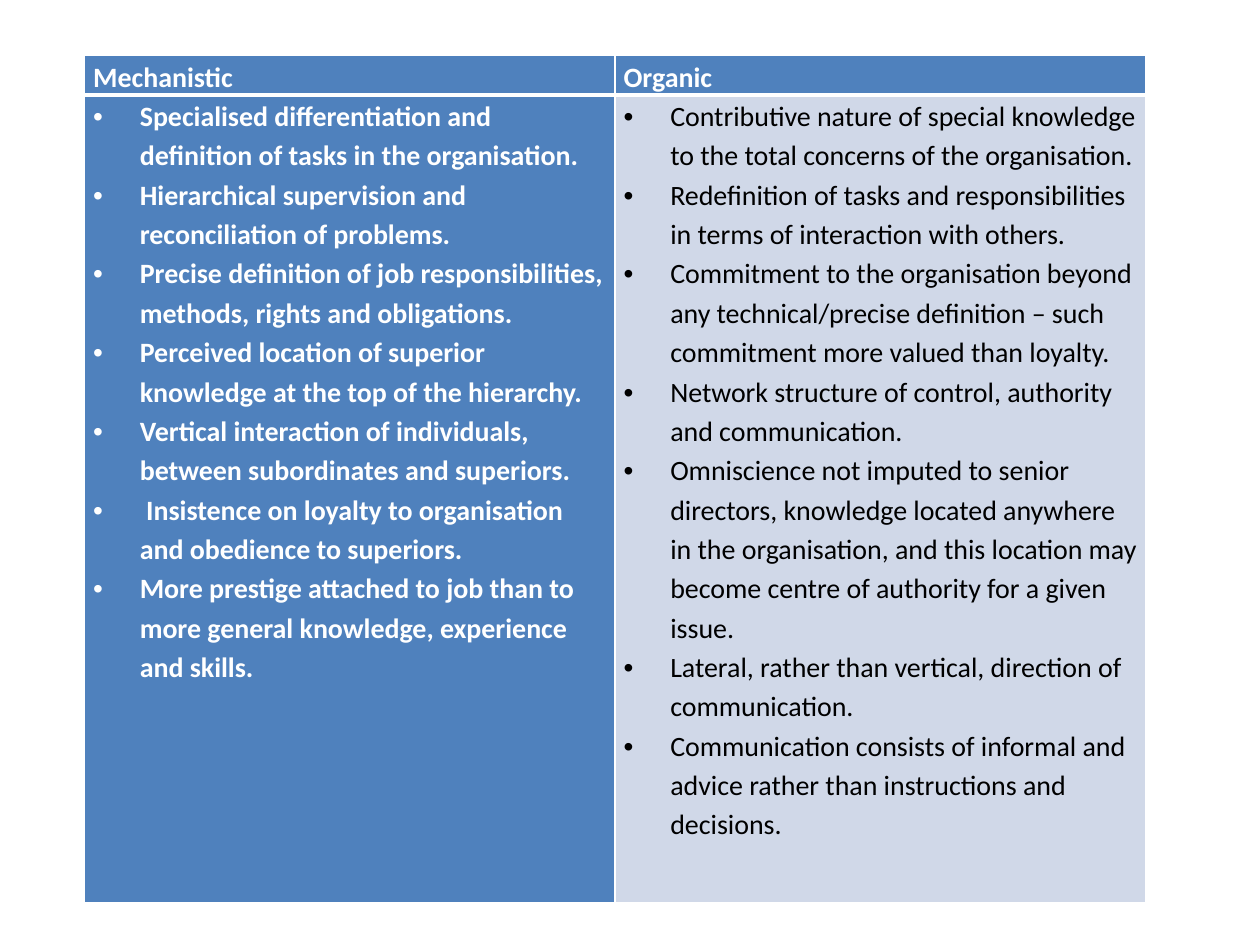
"""Build a slide comparing mechanistic and organic organisations in a table."""
from lxml.etree import SubElement
from pptx import Presentation
from pptx.dml.color import RGBColor
from pptx.oxml.ns import qn
from pptx.util import Inches, Pt

BLUE, PALE, WHITE, BLACK = "4F81BD", "D0D8E8", "FFFFFF", "000000"
HEADER_HEIGHT, BODY_HEIGHT = Inches(0.29), Inches(6.41)
COLUMN_WIDTH = Inches(4.21)
BULLET_INDENT = Inches(0.37)

MECHANISTIC = [
    "Specialised differentiation and definition of tasks in the organisation.",
    "Hierarchical supervision and reconciliation of problems.",
    "Precise definition of job responsibilities, methods, rights and obligations.",
    "Perceived location of superior knowledge at the top of the hierarchy.",
    "Vertical interaction of individuals, between subordinates and superiors.",
    " Insistence on loyalty to organisation and obedience to superiors.",
    "More prestige attached to job than to more general knowledge, experience and skills.",
]
ORGANIC = [
    "Contributive nature of special knowledge to the total concerns of the organisation.",
    "Redefinition of tasks and responsibilities in terms of interaction with others.",
    "Commitment to the organisation beyond any technical/precise definition – such "
    "commitment more valued than loyalty.",
    "Network structure of control, authority and communication.",
    "Omniscience not imputed to senior directors, knowledge located anywhere in the "
    "organisation, and this location may become centre of authority for a given issue.",
    "Lateral, rather than vertical, direction of communication.",
    "Communication consists of informal and advice rather than instructions and decisions.",
]


def color(value):
    """Turn a hex string into a colour."""
    return RGBColor.from_string(value)


def add_text(paragraph, text, ink=WHITE, bold=True, bullet=False):
    """Write one paragraph in the given format."""
    paragraph.line_spacing = 1.15
    span = paragraph.add_run()
    span.text = text
    span.font.name = "Calibri"
    span.font.size = Pt(16)
    span.font.bold = bold
    span.font.color.rgb = color(ink)
    if bullet:
        properties = paragraph._p.get_or_add_pPr()
        properties.set("marL", str(BULLET_INDENT))
        properties.set("indent", str(-BULLET_INDENT))
        SubElement(properties, qn("a:buFont"), typeface="Arial")
        SubElement(properties, qn("a:buChar"), char="•")


deck = Presentation()
deck.slide_width, deck.slide_height = Inches(10), Inches(7.5)
page = deck.slides.add_slide(deck.slide_layouts[6])

table = page.shapes.add_table(
    2, 2, Inches(0.67), Inches(0.44), 2 * COLUMN_WIDTH, HEADER_HEIGHT + BODY_HEIGHT
).table
table.rows[0].height, table.rows[1].height = HEADER_HEIGHT, BODY_HEIGHT

columns = [
    ("Mechanistic", MECHANISTIC, BLUE, WHITE, True),
    ("Organic", ORGANIC, PALE, BLACK, False),
]
for column, (heading, points, body_fill, ink, bold) in enumerate(columns):
    table.columns[column].width = COLUMN_WIDTH
    header, body = table.cell(0, column), table.cell(1, column)

    for cell, fill, thick_side in [(header, BLUE, "lnB"), (body, body_fill, "lnT")]:
        cell.margin_left, cell.margin_right = Inches(0.07), Inches(0.06)
        cell.margin_top = cell.margin_bottom = 0
        cell_properties = cell._tc.get_or_add_tcPr()
        for side in ("lnL", "lnR", "lnT", "lnB"):
            width = Pt(3 if side == thick_side else 1)
            line = SubElement(cell_properties, qn(f"a:{side}"), w=str(width))
            SubElement(SubElement(line, qn("a:solidFill")), qn("a:srgbClr"), val=WHITE)
        cell.fill.solid()
        cell.fill.fore_color.rgb = color(fill)

    add_text(header.text_frame.paragraphs[0], heading)
    frame = body.text_frame
    for index, point in enumerate(points):
        paragraph = frame.add_paragraph() if index else frame.paragraphs[0]
        add_text(paragraph, point, ink=ink, bold=bold, bullet=True)

deck.save("out.pptx")
